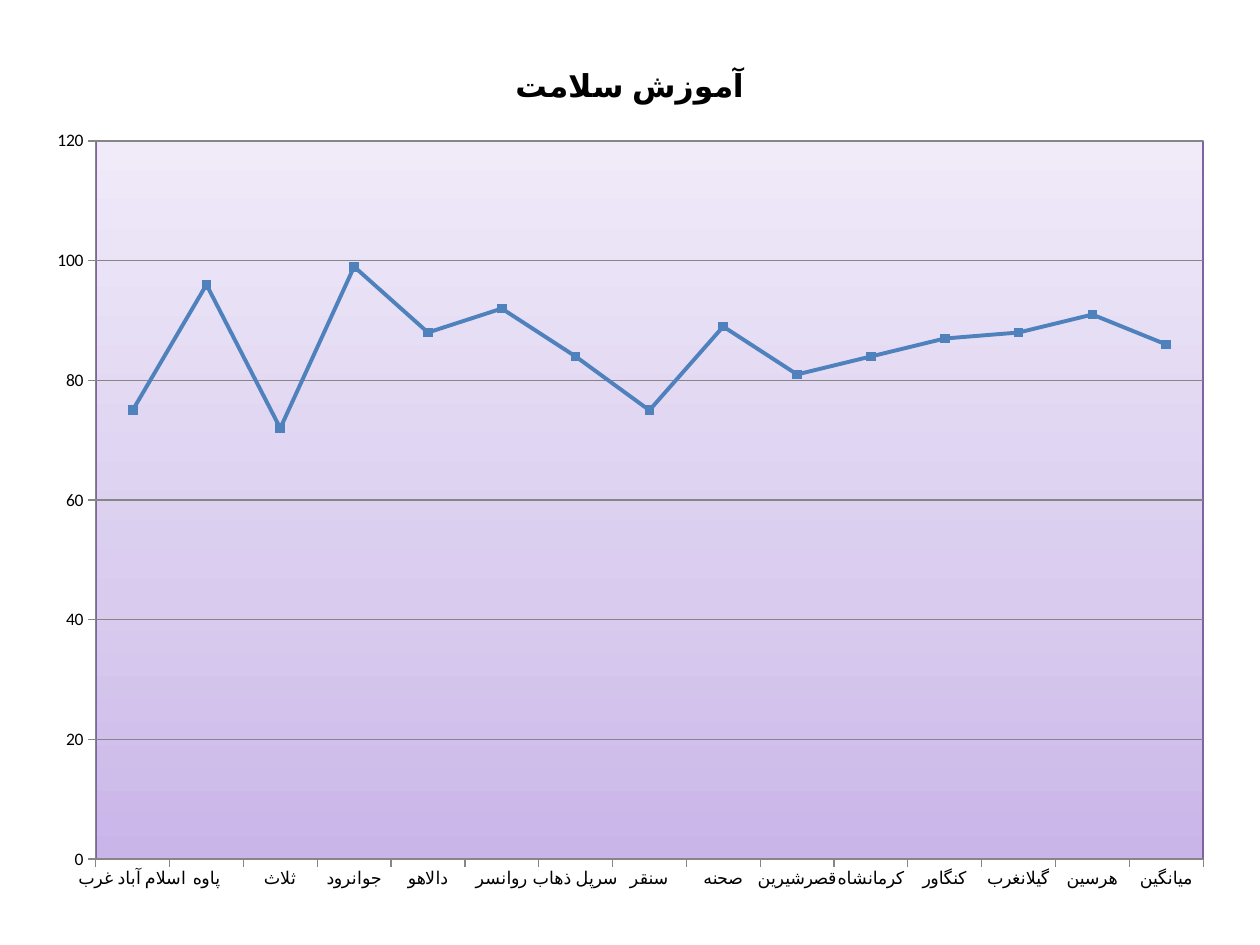
from lxml.etree import SubElement
from pptx import Presentation
from pptx.chart.data import CategoryChartData
from pptx.dml.color import RGBColor
from pptx.enum.chart import XL_CHART_TYPE, XL_MARKER_STYLE, XL_TICK_MARK
from pptx.oxml import parse_xml
from pptx.oxml.ns import nsdecls, qn
from pptx.util import Inches, Pt

COLORS = {
    "text": "000000",
    "series": "4F81BD",
    "axis": "868686",
    "border": "8064A2",
    "plot_bottom": "C9B5E8",
    "plot_middle": "D8CBEE",
    "plot_top": "F0EAF9",
}
TITLE = "آموزش سلامت"
SCORES = {
    "اسلام آباد غرب": 75,
    "پاوه": 96,
    "ثلاث": 72,
    "جوانرود": 99,
    "دالاهو": 88,
    "روانسر": 92,
    "سرپل ذهاب": 84,
    "سنقر": 75,
    "صحنه": 89,
    "قصرشیرین": 81,
    "کرمانشاه": 84,
    "کنگاور": 87,
    "گیلانغرب": 88,
    "هرسین": 91,
    "میانگین": 86,
}


class SlideBuilder:
    font_name = "Calibri"

    def __init__(self, slide):
        self.slide = slide

    def color(self, name):
        return RGBColor.from_string(COLORS[name])

    def style_font(self, font, size, bold=False):
        font.name = self.font_name
        font.size = Pt(size)
        font.bold = bold
        font.color.rgb = self.color("text")

    def style_line(self, line, color, width):
        line.color.rgb = self.color(color)
        line.width = Pt(width)

    def style_axis(self, axis):
        axis.major_tick_mark = XL_TICK_MARK.OUTSIDE
        axis.minor_tick_mark = XL_TICK_MARK.NONE
        self.style_line(axis.format.line, "axis", 0.75)
        self.style_font(axis.tick_labels.font, 10)

    def add_title(self, chart, text):
        chart.has_title = True
        chart.chart_title.include_in_layout = False
        paragraph = chart.chart_title.text_frame.paragraphs[0]
        run = paragraph.add_run()
        run.text = text
        self.style_font(run.font, 18, bold=True)

    def place_plot(self, plot_area, chart_box, plot_box):
        for old_layout in plot_area.findall(qn("c:layout")):
            plot_area.remove(old_layout)
        layout = parse_xml(f"<c:layout {nsdecls('c')}/>")
        plot_area.insert(0, layout)
        manual = SubElement(layout, qn("c:manualLayout"))
        chart_left, chart_top, chart_width, chart_height = chart_box
        left, top, width, height = plot_box
        settings = {
            "layoutTarget": "inner",
            "xMode": "edge",
            "yMode": "edge",
            "x": (left - chart_left) / chart_width,
            "y": (top - chart_top) / chart_height,
            "w": width / chart_width,
            "h": height / chart_height,
        }
        for name, value in settings.items():
            SubElement(manual, qn(f"c:{name}")).set("val", str(value))

    def fill_plot(self, plot_area, stops, border):
        stop_xml = "".join(
            f'<a:gs pos="{percent * 1000}"><a:srgbClr val="{COLORS[name]}"/></a:gs>'
            for percent, name in stops
        )
        plot_area.append(parse_xml(
            f"<c:spPr {nsdecls('c', 'a')}>"
            f'<a:gradFill rotWithShape="1"><a:gsLst>{stop_xml}</a:gsLst>'
            '<a:lin ang="16200000" scaled="1"/></a:gradFill>'
            f'<a:ln w="{Pt(1)}"><a:solidFill><a:srgbClr val="{COLORS[border]}"/>'
            "</a:solidFill></a:ln></c:spPr>"
        ))

    def add_line_chart(self, title, scores, chart_box, plot_box):
        data = CategoryChartData()
        data.categories = list(scores)
        data.add_series(title, list(scores.values()))
        chart = self.slide.shapes.add_chart(
            XL_CHART_TYPE.LINE_MARKERS, *map(Inches, chart_box), data
        ).chart
        chart.has_legend = False
        self.style_font(chart.font, 10)
        self.add_title(chart, title)

        category_axis, value_axis = chart.category_axis, chart.value_axis
        for axis in (category_axis, value_axis):
            self.style_axis(axis)
        value_axis.minimum_scale, value_axis.maximum_scale = 0, 120
        value_axis.major_unit = 20
        value_axis.has_major_gridlines = True
        self.style_line(value_axis.major_gridlines.format.line, "axis", 0.75)
        category_element = category_axis._element
        label_skip = parse_xml(f'<c:tickLblSkip {nsdecls("c")} val="1"/>')
        category_element.find(qn("c:noMultiLvlLbl")).addprevious(label_skip)

        plot = chart.plots[0]
        plot.vary_by_categories = False
        series = plot.series[0]
        series.smooth = False
        self.style_line(series.format.line, "series", 2.25)
        marker = series.marker
        marker.style, marker.size = XL_MARKER_STYLE.SQUARE, 5
        marker.format.fill.solid()
        marker.format.fill.fore_color.rgb = self.color("series")
        self.style_line(marker.format.line, "series", 0.75)

        plot_area = category_element.getparent()
        self.place_plot(plot_area, chart_box, plot_box)
        stops = [(0, "plot_bottom"), (35, "plot_middle"), (100, "plot_top")]
        self.fill_plot(plot_area, stops, "border")


def main():
    presentation = Presentation()
    presentation.slide_width = Inches(10)
    presentation.slide_height = Inches(7.5)
    slide = presentation.slides.add_slide(presentation.slide_layouts[6])
    builder = SlideBuilder(slide)
    builder.add_line_chart(
        TITLE, SCORES, (0.26, 0.31, 9.48, 6.88), (0.76, 1.12, 8.79, 5.7)
    )
    presentation.save("out.pptx")


if __name__ == "__main__":
    main()
